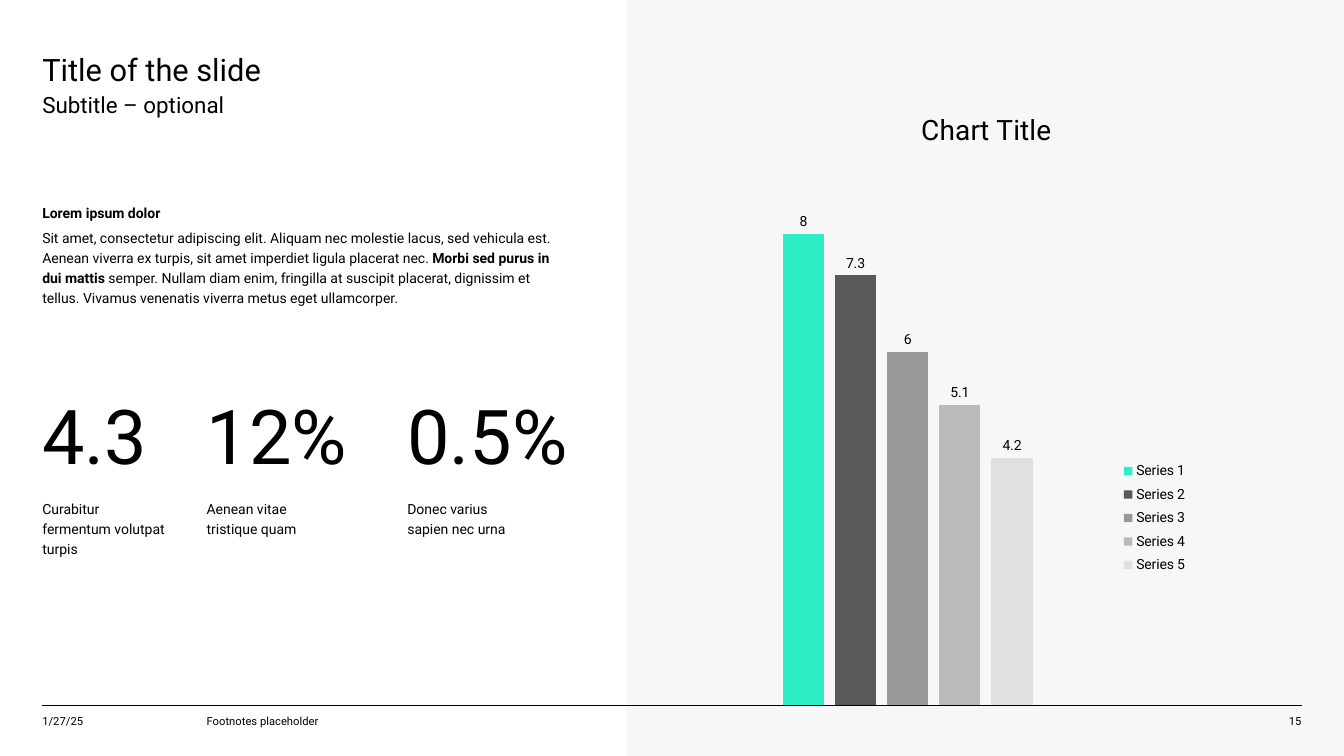
"""Builds a slide with key figures on the left and a column chart on the right."""
from dataclasses import dataclass

from lxml import etree
from pptx import Presentation
from pptx import util as u
from pptx.chart.data import CategoryChartData
from pptx.dml.color import RGBColor
from pptx.enum import chart as kinds, shapes, text
from pptx.oxml.ns import qn

PX = 9144


@dataclass(frozen=True)
class Theme:
    font: str = "Roboto"
    ink: str = "000000"
    panel: str = "F7F7F7"
    bars: tuple = ("2FEDC4", "595959", "999999", "BABABA", "E0E0E0")
    title: int = 22
    chart: int = 20
    sub: int = 16
    body: int = 10
    foot: int = 8
    stat: int = 54


T = Theme()
LEFT, MID, FAR, END = 42, 205, 404, 1291
RULE = 700
FOOT = 709
VALUES = (8, 7.3, 6, 5.1, 4.2)
STATS = (
    (LEFT, 122, "4.3", "Curabitur fermentum volutpat turpis"),
    (MID, 130, "12%", "Aenean vitae tristique quam"),
    (FAR, 117, "0.5%", "Donec varius sapien nec urna"),
)
BODY = (
    (("Lorem ipsum dolor", True),),
    (
        ("Sit amet, consectetur adipiscing elit. Aliquam nec molestie lacus, "
         "sed vehicula est. Aenean viverra ex turpis, sit amet imperdiet "
         "ligula placerat nec. ", False),
        ("Morbi sed purus in dui mattis ", True),
        ("semper. Nullam diam enim, fringilla at suscipit placerat, dignissim "
         "et tellus. Vivamus venenatis viverra metus eget ullamcorper.", False),
    ),
)


def px(*nums):
    return [u.Emu(n * PX) for n in nums]


def style(font, size, bold=False):
    font.name, font.size, font.bold = T.font, u.Pt(size), bold
    font.color.rgb = RGBColor.from_string(T.ink)


def paint(fill, color):
    fill.solid()
    fill.fore_color.rgb = RGBColor.from_string(color)


def write(shape, paras, size, lead=1.0, align=text.PP_ALIGN.LEFT):
    frame = shape.text_frame
    frame.word_wrap = True
    frame.auto_size = text.MSO_AUTO_SIZE.NONE
    frame.vertical_anchor = text.MSO_ANCHOR.TOP
    frame.margin_left = frame.margin_right = 0
    frame.margin_top = frame.margin_bottom = 0
    for i, runs in enumerate(paras):
        para = frame.add_paragraph() if i else frame.paragraphs[0]
        para.alignment, para.line_spacing = align, lead
        para.space_before = u.Pt(3 if i else 0)
        for words, bold in runs:
            run = para.add_run()
            run.text = words
            style(run.font, size, bold)


def label(slide, box, words, size, **opts):
    write(slide.shapes.add_textbox(*px(*box)), [[(words, False)]], size, **opts)


def head(slide, box, words):
    title = slide.shapes.title
    title.left, title.top, title.width, title.height = px(*box)
    write(title, [[(words, False)]], T.title)


def panel(slide, box):
    shape = slide.shapes.add_shape(shapes.MSO_SHAPE.RECTANGLE, *px(*box))
    shape.shadow.inherit = False
    paint(shape.fill, T.panel)
    shape.line.fill.background()


def rule(slide, left, right, top):
    line = slide.shapes.add_connector(
        shapes.MSO_CONNECTOR.STRAIGHT, *px(left, top, right, top))
    line.line.width = u.Pt(0.75)
    line.line.color.rgb = RGBColor.from_string(T.ink)
    etree.SubElement(line.element.spPr, qn("a:effectLst"))


def place(part, slot, **nums):
    """Gives a chart part a fixed layout in fractions of the chart."""
    for old in part.findall(qn("c:layout")):
        part.remove(old)
    layout = etree.Element(qn("c:layout"))
    manual = etree.SubElement(layout, qn("c:manualLayout"))
    if "w" in nums and slot == 0:
        etree.SubElement(manual, qn("c:layoutTarget"), val="inner")
    for key in ("x", "y"):
        etree.SubElement(manual, qn(f"c:{key}Mode"), val="edge")
    for key, num in nums.items():
        etree.SubElement(manual, qn(f"c:{key}"), val=str(num))
    part.insert(slot, layout)


def graph(slide, box):
    data = CategoryChartData()
    data.categories = ["1"]
    for i, value in enumerate(VALUES, 1):
        data.add_series(f"Series {i}", [value])
    chart = slide.shapes.add_chart(
        kinds.XL_CHART_TYPE.COLUMN_CLUSTERED, *px(*box), data).chart
    style(chart.font, T.body)

    run = chart.chart_title.text_frame.paragraphs[0].add_run()
    run.text = "Chart Title"
    style(run.font, T.chart)
    chart.has_legend = True
    chart.legend.position = kinds.XL_LEGEND_POSITION.RIGHT
    chart.legend.include_in_layout = False
    style(chart.legend.font, T.body)

    axis = chart.value_axis
    axis.minimum_scale, axis.maximum_scale = 0, 9
    axis.has_major_gridlines = False
    axis.visible = chart.category_axis.visible = False

    plot = chart.plots[0]
    plot.gap_width, plot.overlap, plot.vary_by_categories = 402, -27, False
    for series, color in zip(plot.series, T.bars):
        paint(series.format.fill, color)
        tags = series.data_labels
        tags.show_value = True
        tags.position = kinds.XL_LABEL_POSITION.OUTSIDE_END
        style(tags.font, T.body)

    root = chart.element
    place(root.find(".//" + qn("c:plotArea")), 0, x=0.065, y=0.151, w=0.644, h=0.849)
    place(root.find(".//" + qn("c:title")), 1, x=0.4, y=0.04)
    place(root.find(".//" + qn("c:legend")), 1, x=0.71, y=0.6, w=0.12, h=0.2)


def main():
    deck = Presentation()
    deck.slide_width, deck.slide_height = px(1333, 750)
    slide = deck.slides.add_slide(deck.slide_layouts[5])
    panel(slide, (621, 0, 712, 750))
    rule(slide, LEFT, END, RULE)
    head(slide, (LEFT, 50, 510, 37), "Title of the slide")
    label(slide, (LEFT, 90, 510, 30), "Subtitle – optional", T.sub)
    graph(slide, (653, 80, 639, 620))
    write(slide.shapes.add_textbox(*px(LEFT, 200, 510, 97)), BODY, T.body, lead=1.2)
    for left, width, stat, note in STATS:
        label(slide, (left, 386, 180, 80), stat, T.stat)
        label(slide, (left, 493, width, 73), note, T.body, lead=1.2)
    label(slide, (LEFT, FOOT, 110, 20), "1/27/25", T.foot)
    label(slide, (MID, FOOT, 350, 20), "Footnotes placeholder", T.foot)
    label(slide, (END - 60, FOOT, 60, 20), "15", T.foot, align=text.PP_ALIGN.RIGHT)
    deck.save("out.pptx")


if __name__ == "__main__":
    main()
